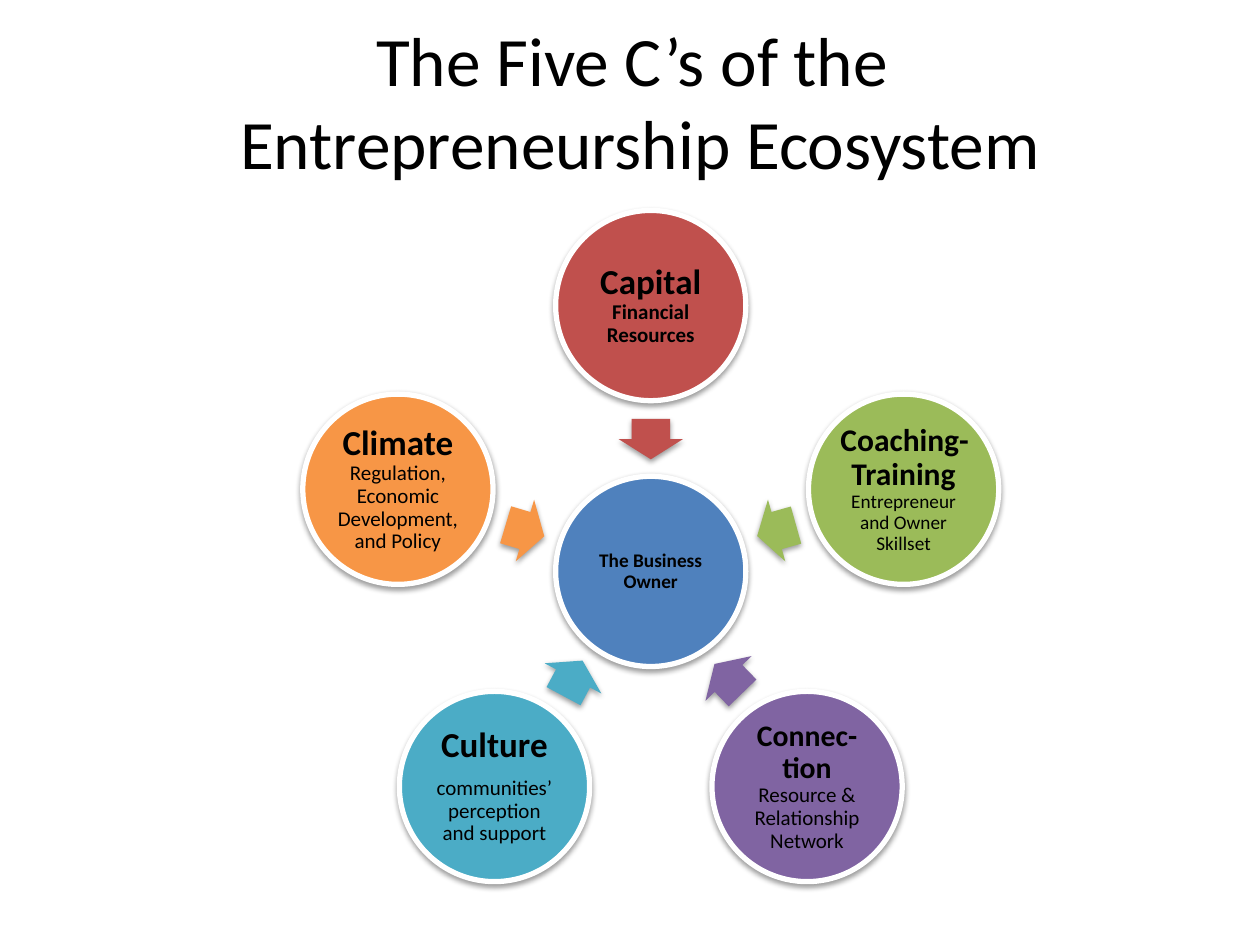
import math

from lxml import etree
from pptx import Presentation, util as u
from pptx.dml.color import RGBColor
from pptx.enum import shapes, text
from pptx.oxml.ns import qn

FONT = "Calibri"
HUB = (5.165, 4.535)
CIRCLE_SIZE = 1.51
CIRCLE_RADIUS, ARROW_RADIUS = 2.11, 1.05
ARROW_SIZE = (0.32, 0.51)

# Clockwise from the top: colour, arrow rotation, paragraphs, gap after heading.
# A paragraph is a list of spans: (wording, size, bold).
PARTS = [
    ("C0504D", 90, [[("Capital", 20, True),
                     (" Financial Resources", 12, True)]], 0),
    ("9BBB59", 164.3, [[("Coaching-Training", 18, True)],
                       [("Entrepreneur and Owner Skillset", 11, False)]], 0),
    ("8064A2", 225.9, [[("Connec-tion", 17, True)],
                       [("Resource & Relationship Network", 12, False)]], 0),
    ("4BACC6", 298.1, [[("Culture", 20, True)],
                       [("communities’ perception and support", 12, False)]], 7),
    ("F79646", 16.6, [[("Climate", 20, True)],
                      [("Regulation, Economic Development, and Policy", 12, False)]], 0),
]


def colour(hex_code):
    return RGBColor.from_string(hex_code)


def style_font(font, size, bold=False):
    font.name = FONT
    font.size = u.Pt(size)
    font.bold = bold
    font.color.rgb = colour("000000")


def add_shadow(shape):
    shape.shadow.inherit = False
    effects = shape._element.spPr.find(qn("a:effectLst"))
    shadow = etree.SubElement(effects, qn("a:outerShdw"), blurRad=str(u.Pt(3.1)),
                              dist=str(u.Pt(1.6)), dir="5400000", rotWithShape="0")
    tint = etree.SubElement(shadow, qn("a:srgbClr"), val="000000")
    etree.SubElement(tint, qn("a:alpha"), val="38000")


def add_centred_shape(group, kind, centre, size, fill):
    (x, y), (width, height) = centre, size
    shape = group.shapes.add_shape(kind, u.Inches(x - width / 2), u.Inches(y - height / 2),
                                   u.Inches(width), u.Inches(height))
    shape.fill.solid()
    shape.fill.fore_color.rgb = colour(fill)
    add_shadow(shape)
    return shape


def add_circle(group, centre, fill, paragraphs, gap=0, inset=0.03):
    circle = add_centred_shape(group, shapes.MSO_SHAPE.OVAL, centre,
                               (CIRCLE_SIZE, CIRCLE_SIZE), fill)
    circle.line.color.rgb = colour("FFFFFF")
    circle.line.width = u.Pt(3)
    frame = circle.text_frame
    frame.word_wrap = True
    frame.vertical_anchor = text.MSO_ANCHOR.MIDDLE
    frame.margin_left = frame.margin_right = u.Inches(inset)
    frame.margin_top = frame.margin_bottom = u.Inches(inset)
    for index, spans in enumerate(paragraphs):
        para = frame.add_paragraph() if index else frame.paragraphs[0]
        para.alignment = text.PP_ALIGN.CENTER
        para.line_spacing = 0.9
        para.space_after = u.Pt(0 if index else gap)
        for wording, size, bold in spans:
            span = para.add_run()
            span.text = wording
            style_font(span.font, size, bold)


def add_arrow(group, centre, fill, rotation):
    arrow = add_centred_shape(group, shapes.MSO_SHAPE.RIGHT_ARROW, centre, ARROW_SIZE, fill)
    arrow.adjustments[0], arrow.adjustments[1] = 0.6, 0.5
    arrow.line.fill.background()
    arrow.rotation = rotation


def around_hub(radius, angle):
    return HUB[0] + radius * math.sin(angle), HUB[1] - radius * math.cos(angle)


def set_title(slide):
    title = slide.shapes.title
    title.left, title.top = u.Inches(0.58), u.Inches(0.17)
    title.width, title.height = u.Inches(9), u.Inches(1.25)
    frame = title.text_frame
    frame.text = "The Five C’s of the \vEntrepreneurship Ecosystem"
    frame.auto_size = text.MSO_AUTO_SIZE.NONE
    frame.vertical_anchor = text.MSO_ANCHOR.MIDDLE
    para = frame.paragraphs[0]
    para.alignment = text.PP_ALIGN.CENTER
    for span in para.runs:
        style_font(span.font, 39.6)


def main():
    deck = Presentation()
    deck.slide_width, deck.slide_height = u.Inches(10), u.Inches(7.5)
    slide = deck.slides.add_slide(deck.slide_layouts[5])
    set_title(slide)

    # Hub, then the five circles with arrows pointing inwards
    diagram = slide.shapes.add_group_shape()
    add_circle(diagram, HUB, "4F81BD", [[("The Business Owner", 11, True)]], inset=0.02)
    for index, (fill, rotation, paragraphs, gap) in enumerate(PARTS):
        angle = 2 * math.pi * index / len(PARTS)
        add_arrow(diagram, around_hub(ARROW_RADIUS, angle), fill, rotation)
        add_circle(diagram, around_hub(CIRCLE_RADIUS, angle), fill, paragraphs, gap)

    deck.save("out.pptx")


if __name__ == "__main__":
    main()
